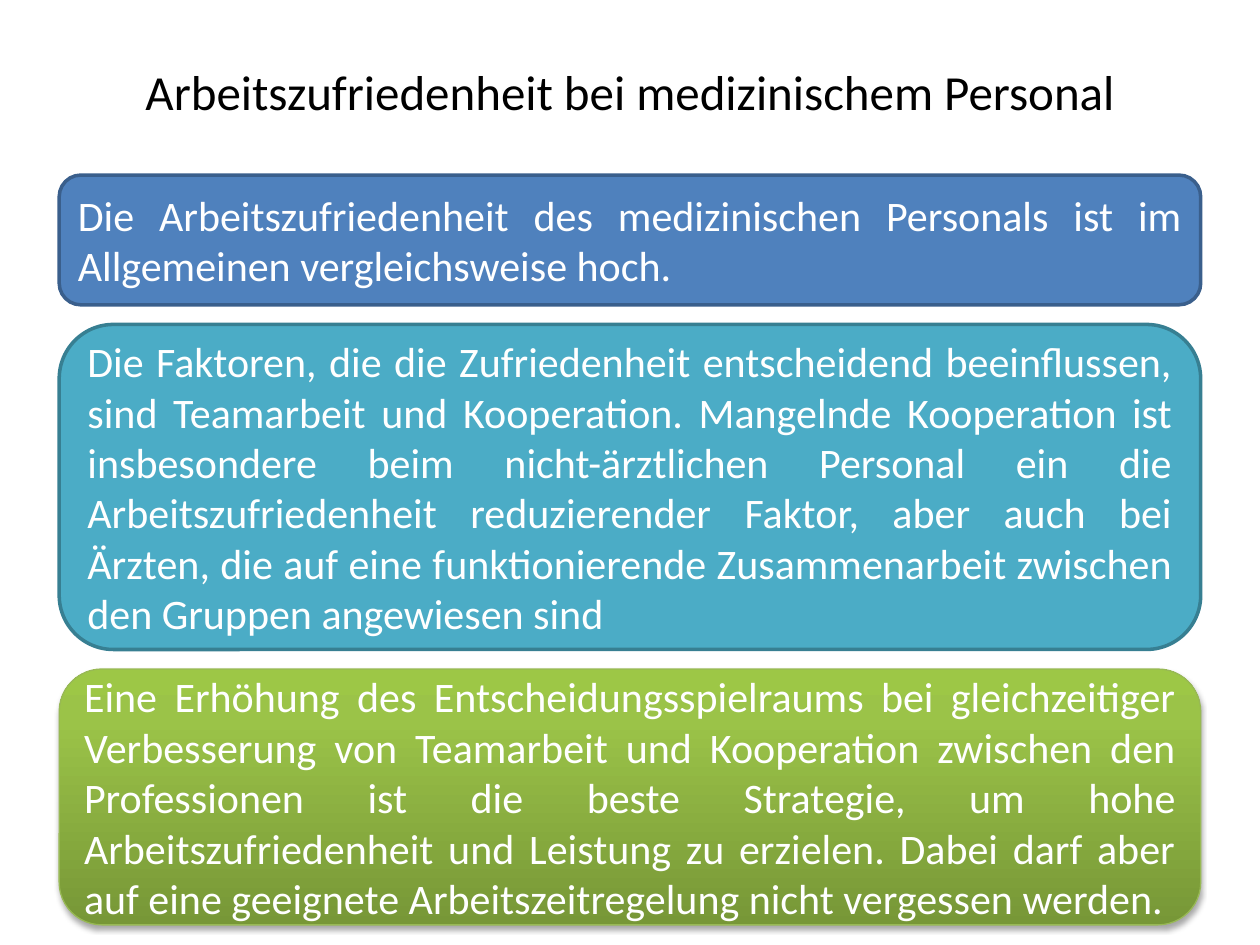
from dataclasses import dataclass
from typing import Optional

from lxml.etree import SubElement
from pptx import Presentation
from pptx.dml.color import RGBColor
from pptx.enum.shapes import MSO_SHAPE as Shape
from pptx.enum.text import MSO_ANCHOR as Anchor, MSO_AUTO_SIZE as AutoSize, PP_ALIGN as Align
from pptx.oxml import parse_xml
from pptx.oxml.ns import nsdecls, qn
from pptx.util import Inches, Pt

WIDTH, HEIGHT = Inches(10), Inches(7.5)
BLACK = RGBColor(0x00, 0x00, 0x00)
WHITE = RGBColor(0xFF, 0xFF, 0xFF)
BLUE = RGBColor(0x4F, 0x81, 0xBD)
BLUE_EDGE = RGBColor(0x3A, 0x5F, 0x8C)
TEAL = RGBColor(0x4B, 0xAC, 0xC6)
TEAL_EDGE = RGBColor(0x37, 0x7F, 0x92)
GREEN_EDGE = RGBColor(0x98, 0xB9, 0x55)
GREEN_STOPS = (
    (0, RGBColor(0x77, 0x97, 0x37)),
    (80, RGBColor(0x9B, 0xC3, 0x48)),
    (100, RGBColor(0x9D, 0xC7, 0x46)),
)

PANEL_LEFT, PANEL_WIDTH = 4.7, 90.6
PANEL_TOP, PANEL_GAP = 18.53, 2.07


@dataclass(frozen=True)
class Panel:
    text: str
    height: float
    edge: RGBColor
    edge_width: float = 2
    fill: Optional[RGBColor] = None


PANELS = (
    Panel(
        "Die Arbeitszufriedenheit des medizinischen Personals ist im "
        "Allgemeinen vergleichsweise hoch.",
        13.73, BLUE_EDGE, fill=BLUE,
    ),
    Panel(
        "Die Faktoren, die die Zufriedenheit entscheidend beeinflussen, sind "
        "Teamarbeit und Kooperation. Mangelnde Kooperation ist insbesondere beim "
        "nicht-ärztlichen Personal ein die Arbeitszufriedenheit reduzierender Faktor, "
        "aber auch bei Ärzten, die auf eine funktionierende Zusammenarbeit zwischen "
        "den Gruppen angewiesen sind",
        34.4, TEAL_EDGE, fill=TEAL,
    ),
    Panel(
        "Eine Erhöhung des Entscheidungsspielraums bei gleichzeitiger Verbesserung "
        "von Teamarbeit und Kooperation zwischen den Professionen ist die beste "
        "Strategie, um hohe Arbeitszufriedenheit und Leistung zu erzielen. Dabei darf "
        "aber auf eine geeignete Arbeitszeitregelung nicht vergessen werden.",
        27.07, GREEN_EDGE, edge_width=0.75,
    ),
)


def across(percent: float) -> int:
    return round(WIDTH * percent / 100)


def down(percent: float) -> int:
    return round(HEIGHT * percent / 100)


def write_text(shape, text: str, *, size: float, color: RGBColor, align: Align) -> None:
    frame = shape.text_frame
    frame.word_wrap = True
    frame.auto_size = AutoSize.NONE
    frame.vertical_anchor = Anchor.MIDDLE
    paragraph = frame.paragraphs[0]
    paragraph.alignment = align
    run = paragraph.add_run()
    run.text = text
    run.font.name = "Calibri"
    run.font.size = Pt(size)
    run.font.color.rgb = color


def apply_green_gradient(shape) -> None:
    stops = "".join(
        f'<a:gs pos="{position * 1000}"><a:srgbClr val="{color}"/></a:gs>'
        for position, color in GREEN_STOPS
    )
    gradient = parse_xml(
        f'<a:gradFill {nsdecls("a")} rotWithShape="1"><a:gsLst>{stops}</a:gsLst>'
        '<a:lin ang="16200000" scaled="0"/></a:gradFill>'
    )
    shape._element.spPr.find(qn("a:prstGeom")).addnext(gradient)


def add_soft_shadow(shape) -> None:
    effects = shape._element.spPr.find(qn("a:effectLst"))
    shadow = SubElement(
        effects, qn("a:outerShdw"), blurRad=str(Pt(3.1)), dist=str(Pt(1.8)),
        dir="5400000", rotWithShape="0",
    )
    color = SubElement(shadow, qn("a:srgbClr"), val=str(BLACK))
    SubElement(color, qn("a:alpha"), val="35000")


def draw_panel(slide, panel: Panel, top: float) -> None:
    shape = slide.shapes.add_shape(
        Shape.ROUNDED_RECTANGLE,
        across(PANEL_LEFT), down(top), across(PANEL_WIDTH), down(panel.height),
    )
    shape.shadow.inherit = False
    shape.line.color.rgb = panel.edge
    shape.line.width = Pt(panel.edge_width)
    if panel.fill is None:
        apply_green_gradient(shape)
        add_soft_shadow(shape)
    else:
        shape.fill.solid()
        shape.fill.fore_color.rgb = panel.fill
    write_text(shape, panel.text, size=24, color=WHITE, align=Align.JUSTIFY)


def main() -> None:
    presentation = Presentation()
    presentation.slide_width, presentation.slide_height = WIDTH, HEIGHT
    slide = presentation.slides.add_slide(presentation.slide_layouts[5])

    title = slide.shapes.title
    title.left, title.top = across(5), down(4)
    title.width, title.height = across(90), down(11.33)
    write_text(title, "Arbeitszufriedenheit bei medizinischem Personal",
               size=28, color=BLACK, align=Align.CENTER)

    top = PANEL_TOP
    for panel in PANELS:
        draw_panel(slide, panel, top)
        top += panel.height + PANEL_GAP

    presentation.save("out.pptx")


if __name__ == "__main__":
    main()
